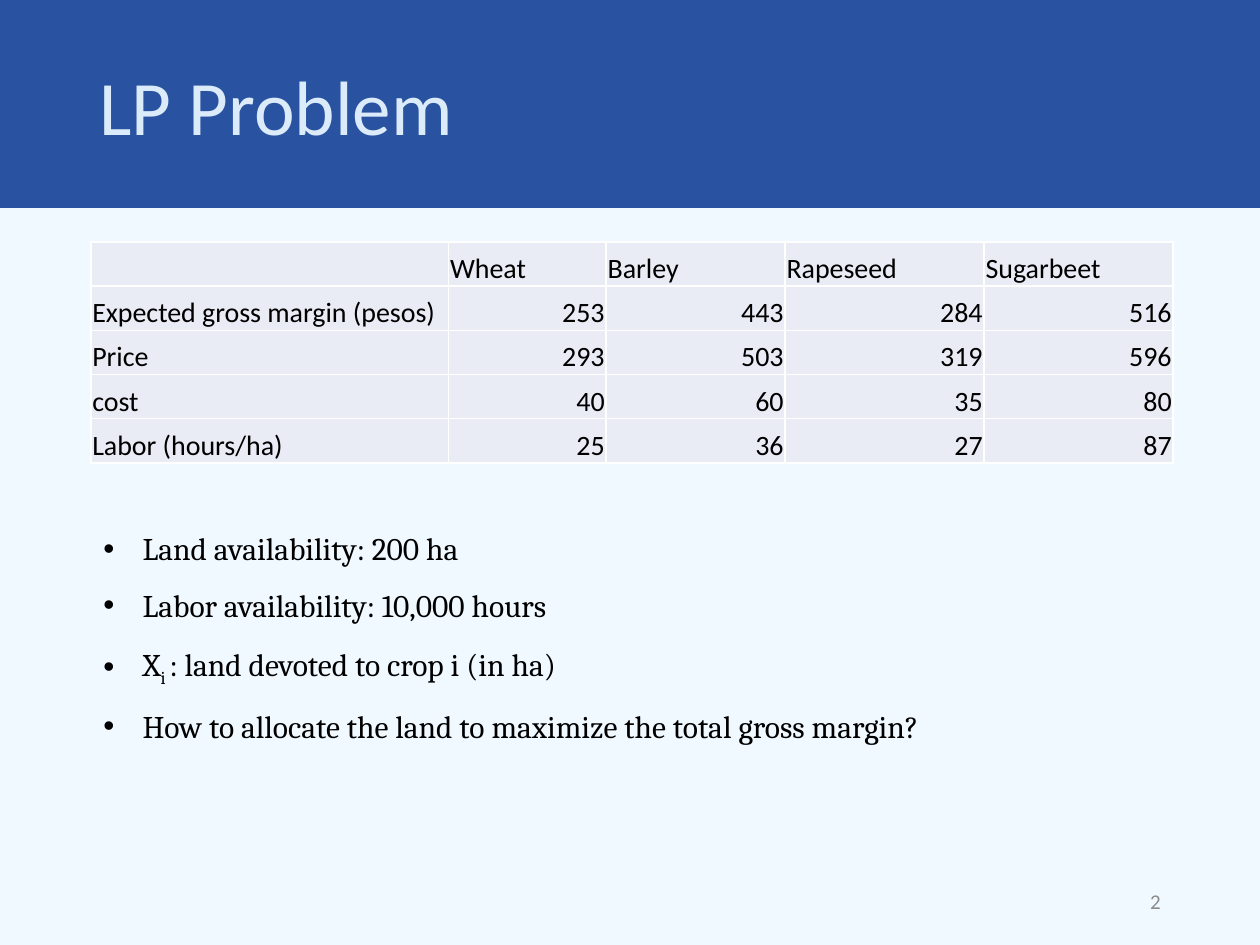
from dataclasses import dataclass

from lxml import etree
from pptx import Presentation
from pptx.dml.color import RGBColor
from pptx.enum.shapes import MSO_SHAPE
from pptx.enum.text import MSO_ANCHOR, MSO_AUTO_SIZE, PP_ALIGN
from pptx.oxml.ns import qn
from pptx.util import Cm, Pt

RECT = MSO_SHAPE.RECTANGLE
MIDDLE, BOTTOM = MSO_ANCHOR.MIDDLE, MSO_ANCHOR.BOTTOM
LEFT, RIGHT = PP_ALIGN.LEFT, PP_ALIGN.RIGHT
NO_FIT = MSO_AUTO_SIZE.NONE


@dataclass(frozen=True)
class Theme:
    back: str = "F0F9FF"
    band: str = "2953A1"
    title: str = "DCEBFA"
    ink: str = "000000"
    cell: str = "E9EBF5"
    rule: str = "FFFFFF"
    muted: str = "8C8C8C"
    sans: str = "Calibri"
    serif: str = "Cambria"
    title_size: int = 44
    list_size: int = 18
    cell_size: int = 16
    page_size: int = 12


THEME = Theme()
CROPS = [
    ("", "Wheat", "Barley", "Rapeseed", "Sugarbeet"),
    ("Expected gross margin (pesos)", 253, 443, 284, 516),
    ("Price", 293, 503, 319, 596),
    ("cost", 40, 60, 35, 80),
    ("Labor (hours/ha)", 25, 36, 27, 87),
]
SHARES = (2.84, 1.25, 1.42, 1.58, 1.5)
POINTS = [
    [("Land availability: 200 ha", False)],
    [("Labor availability: 10,000 hours", False)],
    [("X", False), ("i ", True), (": land devoted to crop i (in ha)", False)],
    [("How to allocate the land to maximize the total gross margin?", False)],
]


def paint(fill, color):
    fill.solid()
    fill.fore_color.rgb = RGBColor.from_string(color)


def style(para, face, size, color, align=LEFT):
    para.font.name = face
    para.font.size = Pt(size)
    para.font.color.rgb = RGBColor.from_string(color)
    para.alignment = align


def place(shape, box):
    shape.left, shape.top, shape.width, shape.height = map(Cm, box)


def add_head(slide, box):
    left, top, width, height = box
    band = slide.shapes.add_shape(RECT, *map(Cm, box))
    band.shadow.inherit = False
    paint(band.fill, THEME.band)
    band.line.fill.background()
    title = slide.shapes.title
    title._element.addprevious(band._element)
    place(title, (left + 1.75, top + 0.38, width - 3.5, height - 0.51))
    frame = title.text_frame
    frame.text = "LP Problem"
    frame.vertical_anchor = MIDDLE
    frame.auto_size = NO_FIT
    para = frame.paragraphs[0]
    style(para, THEME.sans, THEME.title_size, THEME.title)
    para.line_spacing = 0.9


def add_rules(cell):
    props = cell._tc.get_or_add_tcPr()
    for spot, side in enumerate(("a:lnL", "a:lnR", "a:lnT", "a:lnB")):
        line = etree.Element(qn(side), w=str(Pt(1)))
        fill = etree.SubElement(line, qn("a:solidFill"))
        etree.SubElement(fill, qn("a:srgbClr"), val=THEME.rule)
        props.insert(spot, line)


def add_crops(slide, box):
    left, top, width, height = box
    frame = slide.shapes.add_table(len(CROPS), len(SHARES), *map(Cm, box))
    table = frame.table
    table.first_row = table.horz_banding = False
    for col, share in zip(table.columns, SHARES):
        col.width = Cm(width * share / sum(SHARES))
    for row, values in zip(table.rows, CROPS):
        row.height = Cm(height / len(CROPS))
        for cell, value in zip(row.cells, values):
            cell.text = str(value)
            cell.vertical_anchor = BOTTOM
            cell.margin_left = cell.margin_right = cell.margin_top = Cm(0.03)
            cell.margin_bottom = 0
            paint(cell.fill, THEME.cell)
            add_rules(cell)
            align = RIGHT if isinstance(value, int) else LEFT
            para = cell.text_frame.paragraphs[0]
            style(para, THEME.sans, THEME.cell_size, THEME.ink, align)


def add_list(slide, box):
    body = slide.placeholders[1]
    place(body, box)
    frame = body.text_frame
    frame.auto_size = NO_FIT
    for spot, parts in enumerate(POINTS):
        para = frame.add_paragraph() if spot else frame.paragraphs[0]
        for text, low in parts:
            run = para.add_run()
            run.text = text
            if low:
                run._r.get_or_add_rPr().set("baseline", "-25000")
        style(para, THEME.serif, THEME.list_size, THEME.ink)
        para.line_spacing = 1.5
        para.space_before = Pt(0)
        props = para._p.get_or_add_pPr()
        props.set("marL", str(Cm(0.79)))
        props.set("indent", str(-Cm(0.79)))


def add_page(slide, box):
    frame = slide.shapes.add_textbox(*map(Cm, box)).text_frame
    frame.word_wrap = True
    frame.vertical_anchor = MIDDLE
    frame.text = "2"
    style(frame.paragraphs[0], THEME.sans, THEME.page_size, THEME.muted, RIGHT)


def main():
    deck = Presentation()
    deck.slide_width, deck.slide_height = Cm(25.4), Cm(19.05)
    slide = deck.slides.add_slide(deck.slide_layouts[1])
    paint(slide.background.fill, THEME.back)
    add_head(slide, (0, 0, 25.4, 4.19))
    add_list(slide, (1.83, 10.16, 19.69, 4.72))
    add_page(slide, (17.93, 17.65, 5.72, 1.02))
    add_crops(slide, (1.83, 4.88, 21.82, 4.45))
    deck.save("out.pptx")


if __name__ == "__main__":
    main()
